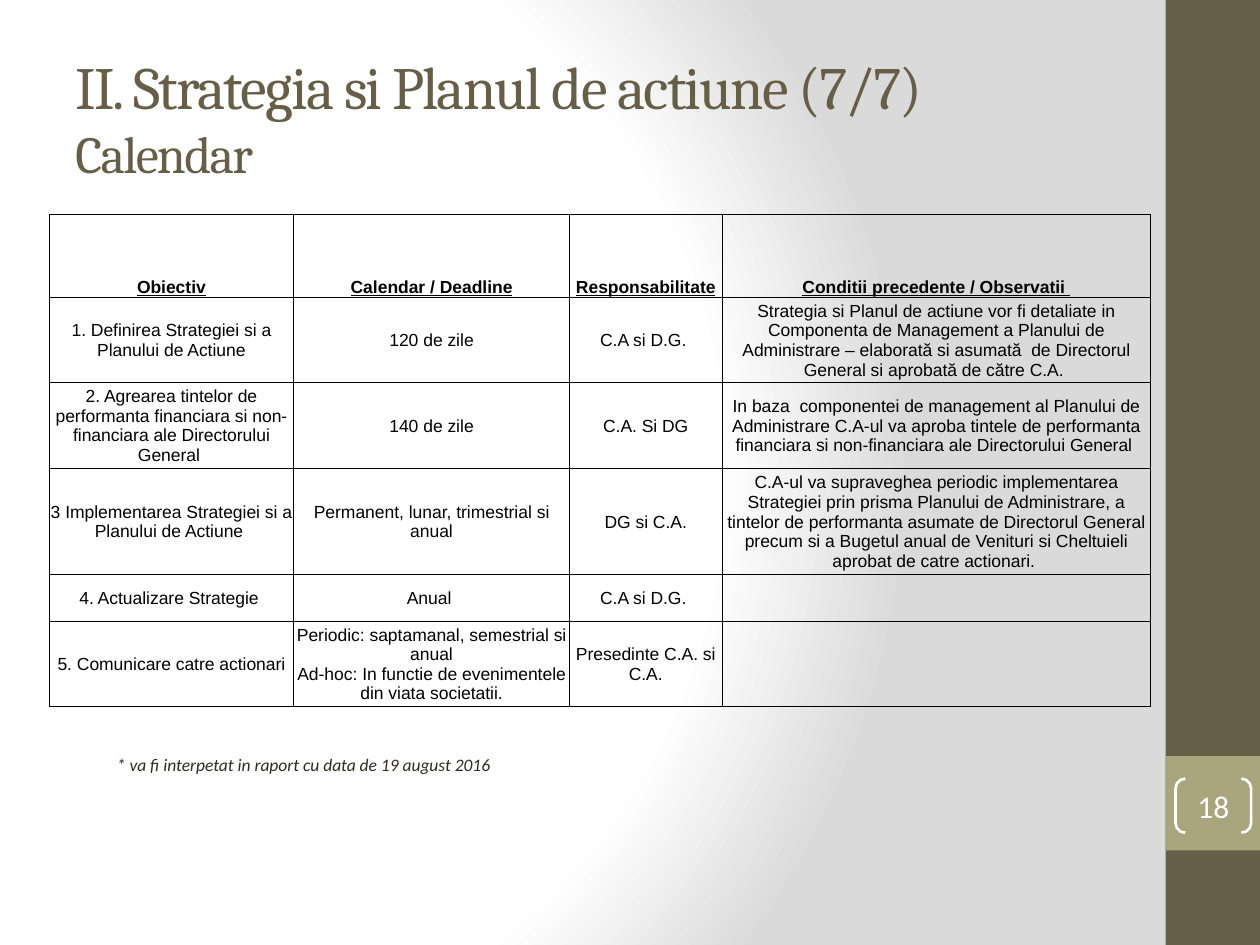
from pptx import Presentation
from pptx.dml.color import RGBColor
from pptx.enum.shapes import MSO_SHAPE as Shape
from pptx.enum.text import MSO_ANCHOR as Anchor, PP_ALIGN as Align
from pptx.oxml import parse_xml
from pptx.oxml.ns import nsdecls
from pptx.util import Inches, Pt

BROWN = RGBColor(0x67, 0x5E, 0x47)
OLIVE = RGBColor(0xA9, 0xA5, 0x7C)
DARK = RGBColor(0x2F, 0x2B, 0x20)
WHITE = RGBColor(0xFF, 0xFF, 0xFF)
BLACK = RGBColor(0x00, 0x00, 0x00)
GREY = RGBColor(0xDA, 0xDA, 0xDA)

COLUMN_WIDTHS = [1.94, 2.19, 1.21, 3.4]
ROW_HEIGHTS = [0.66, 0.66, 0.66, 0.79, 0.37, 0.66]
ROWS = [
    ["Obiectiv", "Calendar / Deadline", "Responsabilitate",
     "Conditii precedente / Observatii "],
    ["1. Definirea Strategiei si a Planului de Actiune", "120 de zile", "C.A si D.G. ",
     "Strategia si Planul de actiune vor fi detaliate in Componenta de Management a "
     "Planului de Administrare – elaborată si asumată  de Directorul General si "
     "aprobată de către C.A. "],
    ["2. Agrearea tintelor de performanta financiara si non-financiara ale "
     "Directorului General ", "140 de zile", "C.A. Si DG",
     "In baza  componentei de management al Planului de Administrare C.A-ul va aproba "
     "tintele de performanta financiara si non-financiara ale Directorului General "],
    ["3 Implementarea Strategiei si a Planului de Actiune ",
     "Permanent, lunar, trimestrial si anual", "DG si C.A.",
     "C.A-ul va supraveghea periodic implementarea Strategiei prin prisma Planului de "
     "Administrare, a tintelor de performanta asumate de Directorul General precum si a "
     "Bugetul anual de Venituri si Cheltuieli aprobat de catre actionari. "],
    ["4. Actualizare Strategie ", "Anual ", "C.A si D.G. ", ""],
    ["5. Comunicare catre actionari",
     "Periodic: saptamanal, semestrial si anual\n"
     "Ad-hoc: In functie de evenimentele din viata societatii.",
     "Presedinte C.A. si C.A.", ""],
]


def set_background(slide):
    slide.background.fill.solid()
    properties = slide.background.fill._xPr
    stops = "".join(
        f'<a:gs pos="{position * 1000}"><a:srgbClr val="{color}"/></a:gs>'
        for position, color in [(0, WHITE), (75, WHITE), (100, GREY)])
    gradient = parse_xml(
        f'<a:gradFill {nsdecls("a")} rotWithShape="1"><a:gsLst>{stops}</a:gsLst>'
        '<a:path path="circle"><a:fillToRect l="20000" t="50000" r="100000" b="50000"/>'
        '</a:path></a:gradFill>')
    properties.replace(properties[0], gradient)


def add_run(paragraph, text, font, size, color, bold=False, italic=False, underline=False):
    run = paragraph.add_run()
    run.text = text
    run.font.name = font
    run.font.size = Pt(size)
    run.font.color.rgb = color
    run.font.bold = bold
    run.font.italic = italic
    run.font.underline = underline
    return run


def add_block(slide, left, top, width, height, color):
    block = slide.shapes.add_shape(
        Shape.RECTANGLE, Inches(left), Inches(top), Inches(width), Inches(height))
    block.shadow.inherit = False
    block.fill.solid()
    block.fill.fore_color.rgb = color
    block.line.fill.background()


def add_text_box(slide, left, top, width, height, anchor):
    box = slide.shapes.add_textbox(Inches(left), Inches(top), Inches(width), Inches(height))
    box.text_frame.word_wrap = True
    box.text_frame.vertical_anchor = anchor
    return box.text_frame.paragraphs[0]


def add_title(slide):
    paragraph = add_text_box(slide, 0.5, 0.3, 8.33, 1.25, Anchor.MIDDLE)
    heading = add_run(paragraph, "II. Strategia si Planul de actiune (7/7)", "Cambria", 34.2, BROWN)
    paragraph.add_line_break()
    subheading = add_run(paragraph, "Calendar", "Cambria", 29.7, BROWN)
    for run in (heading, subheading):
        run.font._element.set("spc", "-100")


def add_page_number(slide, number):
    bracket = slide.shapes.add_shape(
        Shape.DOUBLE_BRACKET, Inches(9.33), Inches(6.18), Inches(0.6), Inches(0.43))
    bracket.adjustments[0] = 0.18
    bracket.shadow.inherit = False
    bracket.fill.background()
    bracket.line.color.rgb = WHITE
    bracket.line.width = Pt(1.5)
    frame = bracket.text_frame
    frame.margin_left = frame.margin_right = frame.margin_top = frame.margin_bottom = 0
    frame.vertical_anchor = Anchor.MIDDLE
    frame.paragraphs[0].alignment = Align.CENTER
    add_run(frame.paragraphs[0], number, "Calibri", 18, WHITE)


def set_borders(cell):
    properties = cell._tc.get_or_add_tcPr()
    for index, side in enumerate(("lnL", "lnR", "lnT", "lnB")):
        properties.insert(index, parse_xml(
            f'<a:{side} {nsdecls("a")} w="{Pt(0.5)}"><a:solidFill>'
            f'<a:srgbClr val="{BLACK}"/></a:solidFill></a:{side}>'))


def fill_cell(cell, text, header):
    cell.fill.background()
    set_borders(cell)
    cell.margin_left = cell.margin_right = cell.margin_top = Inches(0.01)
    cell.margin_bottom = 0
    cell.vertical_anchor = Anchor.BOTTOM if header else Anchor.MIDDLE
    if not text:
        return
    frame = cell.text_frame
    for index, line in enumerate(text.split("\n")):
        paragraph = frame.add_paragraph() if index else frame.paragraphs[0]
        paragraph.alignment = Align.CENTER
        add_run(paragraph, line, "Arial", 10, BLACK, bold=header, underline=header)


def add_calendar_table(slide):
    table = slide.shapes.add_table(
        len(ROWS), len(COLUMN_WIDTHS), Inches(0.39), Inches(1.7),
        Inches(sum(COLUMN_WIDTHS)), Inches(sum(ROW_HEIGHTS))).table
    table.first_row = table.horz_banding = False
    for column, width in zip(table.columns, COLUMN_WIDTHS):
        column.width = Inches(width)
    for index, (row, height) in enumerate(zip(table.rows, ROW_HEIGHTS)):
        row.height = Inches(height)
        for cell, text in zip(row.cells, ROWS[index]):
            fill_cell(cell, text, header=index == 0)


def main():
    presentation = Presentation()
    presentation.slide_width = Inches(10)
    presentation.slide_height = Inches(7.5)
    slide = presentation.slides.add_slide(presentation.slide_layouts[6])

    # Background and side band
    set_background(slide)
    add_block(slide, 9.25, 0, 0.75, 7.5, BROWN)
    add_block(slide, 9.25, 6, 0.75, 0.75, OLIVE)

    # Title, page number and calendar
    add_title(slide)
    add_page_number(slide, "18")
    add_calendar_table(slide)

    # Footnote
    footnote = add_text_box(slide, 0.83, 5.8, 7.87, 0.4, Anchor.BOTTOM)
    add_run(footnote, "* va fi interpetat in raport cu data de 19 august 2016",
            "Calibri", 10, DARK, italic=True)

    presentation.save("out.pptx")


if __name__ == "__main__":
    main()
